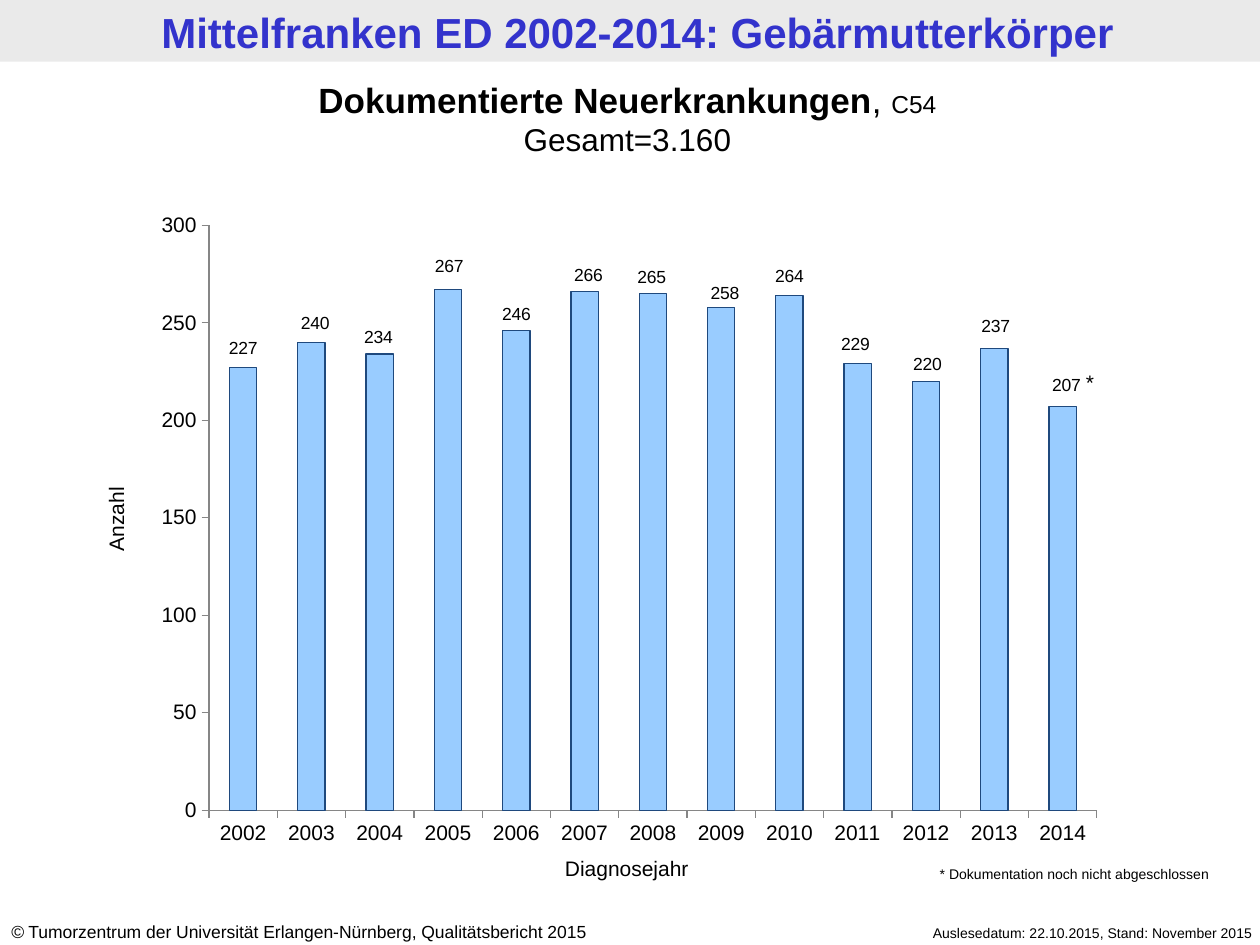
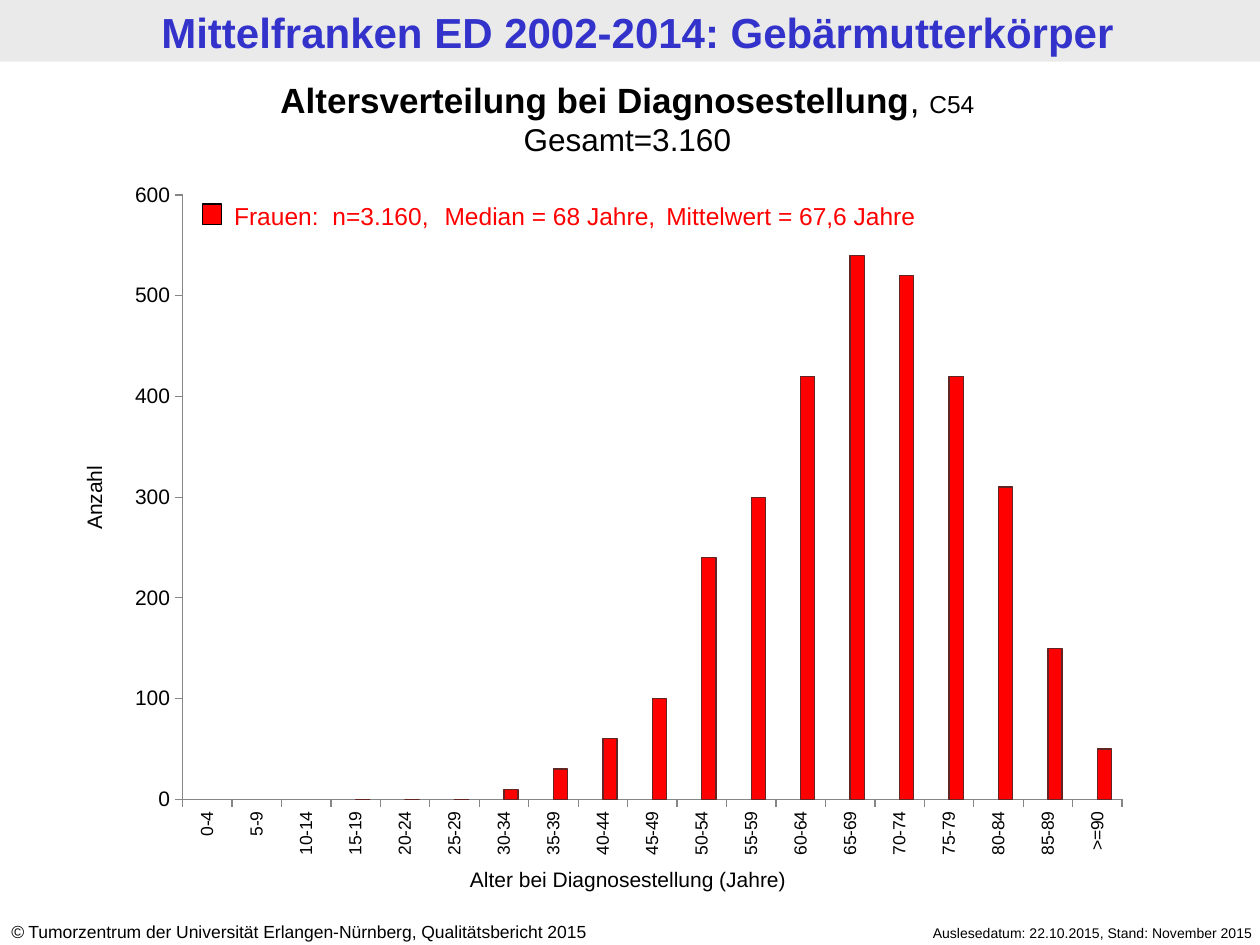
"""Build two slides on uterine cancer in Mittelfranken: new cases by year and by age."""
import pptx
import pptx.chart.data
import pptx.dml.color
import pptx.enum.chart
import pptx.enum.shapes
import pptx.enum.text
import pptx.oxml
import pptx.oxml.ns
import pptx.util

Inches = pptx.util.Inches
Pt = pptx.util.Pt
ALIGN = pptx.enum.text.PP_ALIGN
CHART = pptx.enum.chart

COLOURS = {
    "band": "EAEAEA", "title": "3333CC", "text": "000000", "axis": "868686",
    "year_bar": "99CCFF", "year_line": "1F497D",
    "empty_bar": "3366FF", "empty_line": "0033CC",
    "women": "FF0000", "women_line": "632523", "paper": "FFFFFF",
}
FONT = "Arial"
TITLE = "Mittelfranken ED 2002-2014: Gebärmutterkörper"
TOTAL = "Gesamt=3.160"
COPYRIGHT = " Tumorzentrum der Universität Erlangen-Nürnberg, Qualitätsbericht 2015"
STATUS = "Auslesedatum: 22.10.2015, Stand: November 2015"
LEGEND = "Frauen: \tn=3.160, \tMedian = 68 Jahre,\tMittelwert = 67,6 Jahre"
LEGEND_TABS = [0.78, 0.88, 1.67, 3.43]

YEAR_CASES = [227, 240, 234, 267, 246, 266, 265, 258, 264, 229, 220, 237, 207]
YEAR_LABEL_SHIFTS = [
    (0, 0.15), (0.03, 0.15), (-0.01, 0.13), (0.01, 0.18), (0, 0.13),
    (0.03, 0.13), (-0.01, 0.13), (0.03, 0.11), (0, 0.15), (-0.02, 0.15),
    (0.01, 0.13), (0.01, 0.17), (0.03, 0.17),
]
AGE_CASES = [None, None, None, 0, 0, 0, 10, 30, 60, 100,
             240, 300, 420, 540, 520, 420, 310, 150, 50]

YEAR_CHART = {
    "kind": CHART.XL_CHART_TYPE.COLUMN_STACKED,
    "place": (1.15, 1.64, 7.71, 5.14),
    "plot": (0.066, 0.029, 0.914, 0.903),
    "categories": [str(2002 + step) for step in range(len(YEAR_CASES))],
    "series": [(YEAR_CASES, "year_bar", "year_line")],
    "maximum": 300, "unit": 50, "overlap": 100, "category_size": 12,
}
AGE_CHART = {
    "kind": CHART.XL_CHART_TYPE.COLUMN_CLUSTERED,
    "place": (0.91, 1.35, 8.16, 5.55),
    "plot": (0.066, 0.036, 0.914, 0.864),
    "categories": [f"{age}-{age + 4}" for age in range(0, 90, 5)] + [">=90"],
    "series": [([None] * len(AGE_CASES), "empty_bar", "empty_line"),
               (AGE_CASES, "women", "women_line")],
    "maximum": 600, "unit": 100, "overlap": 0, "category_size": 10,
}


def colour(name):
    return pptx.dml.color.RGBColor.from_string(COLOURS[name])


def apply(target, values):
    for name, value in values.items():
        setattr(target, name, value)


def style_font(font, size, name="text", **extra):
    apply(font, {"size": Pt(size), "name": FONT, **extra})
    font.color.rgb = colour(name)


def style_line(line, name):
    line.color.rgb = colour(name)
    line.width = Pt(0.75)


def add_text(page, place, lines, align=ALIGN.LEFT, inset=(0.1, 0.05), rotation=0, tabs=()):
    box = page.shapes.add_textbox(*map(Inches, place))
    box.rotation = rotation
    frame = box.text_frame
    side, end = map(Inches, inset)
    apply(frame, {"word_wrap": True, "margin_left": side, "margin_right": side,
                  "margin_top": end, "margin_bottom": end,
                  "auto_size": pptx.enum.text.MSO_AUTO_SIZE.SHAPE_TO_FIT_TEXT})
    for number, spans in enumerate(lines):
        para = frame.add_paragraph() if number else frame.paragraphs[0]
        para.alignment = align
        if tabs:
            tab_list = pptx.oxml.parse_xml(
                f"<a:tabLst {pptx.oxml.ns.nsdecls('a')}>"
                + "".join(f'<a:tab pos="{Inches(tab)}" algn="l"/>' for tab in tabs)
                + "</a:tabLst>")
            para._p.get_or_add_pPr().append(tab_list)
        for text, size, values in spans:
            span = para.add_run()
            span.text = text
            style_font(span.font, size, **values)


def add_rectangle(page, place, fill, line=None):
    shape = page.shapes.add_shape(pptx.enum.shapes.MSO_SHAPE.RECTANGLE, *map(Inches, place))
    shape.shadow.inherit = False
    shape.fill.solid()
    shape.fill.fore_color.rgb = colour(fill)
    if line:
        style_line(shape.line, line)
    else:
        shape.line.fill.background()


def add_page(deck, heading):
    page = deck.slides.add_slide(deck.slide_layouts[6])
    add_rectangle(page, (0, 0, 10, 0.49), "band")
    add_text(page, (0.06, 0.01, 10, 0.49), [[(TITLE, 24, {"name": "title", "bold": True})]],
             ALIGN.CENTER, inset=(0.09, 0.04))
    add_text(page, (6.65, 7.29, 3.39, 0.24), [[(STATUS, 8, {})]], ALIGN.RIGHT)
    add_text(page, (-0.01, 7.26, 5.24, 0.27),
             [[("©", 10, {"italic": True}), (COPYRIGHT, 10, {})]])
    add_text(page, (-0.04, 0.57, 10.04, 0.74),
             [[(heading, 20, {"bold": True}), (", ", 20, {}), ("C54", 14, {})],
              [(TOTAL, 18, {})]], ALIGN.CENTER)
    return page


def add_axis_titles(page, across, across_place, up_place):
    add_text(page, across_place, [[(across, 12, {})]], ALIGN.CENTER)
    add_text(page, up_place, [[("Anzahl", 12, {})]], ALIGN.CENTER, rotation=270)


def make_layout(target="", **sizes):
    inner = f'<c:layoutTarget val="{target}"/>' if target else ""
    if target:
        inner += '<c:xMode val="edge"/><c:yMode val="edge"/>'
    inner += "".join(f'<c:{key} val="{value:.4f}"/>' for key, value in sizes.items())
    return pptx.oxml.parse_xml(
        f"<c:layout {pptx.oxml.ns.nsdecls('c')}>"
        f"<c:manualLayout>{inner}</c:manualLayout></c:layout>")


def add_column_chart(page, design):
    data = pptx.chart.data.CategoryChartData()
    data.categories = design["categories"]
    for number, (values, _, _) in enumerate(design["series"], 1):
        data.add_series(f"Series {number}", values)
    chart = page.shapes.add_chart(design["kind"], *map(Inches, design["place"]), data).chart
    apply(chart, {"has_legend": False, "has_title": False})
    style_font(chart.font, 12)
    plot = chart.plots[0]
    apply(plot, {"gap_width": 150, "overlap": design["overlap"], "vary_by_categories": False})
    for series, (_, fill, line) in zip(plot.series, design["series"]):
        series.invert_if_negative = False
        series.format.fill.solid()
        series.format.fill.fore_color.rgb = colour(fill)
        style_line(series.format.line, line)
    apply(chart.value_axis, {"minimum_scale": 0, "maximum_scale": design["maximum"],
                             "major_unit": design["unit"]})
    for axis, size in ((chart.category_axis, design["category_size"]), (chart.value_axis, 12)):
        apply(axis, {"has_major_gridlines": False,
                     "major_tick_mark": CHART.XL_TICK_MARK.OUTSIDE,
                     "minor_tick_mark": CHART.XL_TICK_MARK.NONE})
        style_line(axis.format.line, "axis")
        style_font(axis.tick_labels.font, size)
    area = chart.element.xpath("//c:plotArea")[0]
    for old in area.xpath("./c:layout"):
        area.remove(old)
    area.insert(0, make_layout("inner", **dict(zip("xywh", design["plot"]))))
    return chart


def hide_leader_lines(chart):
    labels = chart.element.xpath("//c:ser/c:dLbls")[0]
    for old in labels.xpath("./c:showLeaderLines | ./c:extLst"):
        labels.remove(old)
    namespace = pptx.oxml.ns.nsdecls("c")
    labels.append(pptx.oxml.parse_xml(f'<c:showLeaderLines {namespace} val="0"/>'))
    labels.append(pptx.oxml.parse_xml(
        f'<c:extLst {namespace}><c:ext uri="{{CE6537A1-D6FC-4f65-9D91-7224C49458BB}}" '
        'xmlns:c15="http://schemas.microsoft.com/office/drawing/2012/chart">'
        '<c15:showLeaderLines val="0"/></c:ext></c:extLst>'))


def label_columns(chart, design, shifts):
    _, _, width, height = design["place"]
    series = chart.plots[0].series[0]
    style_font(series.data_labels.font, 10)
    series.data_labels.show_value = True
    for number in range(len(shifts)):
        label = series.points[number].data_label
        style_font(label.font, 10)
        label.position = CHART.XL_LABEL_POSITION.CENTER
    for element, value, (right, rise) in zip(chart.element.xpath("//c:dLbl"),
                                             series.values, shifts):
        half_column = value / design["maximum"] * design["plot"][3] / 2
        element.insert(1, make_layout(x=right / width, y=-half_column - rise / height))
    hide_leader_lines(chart)


def build_year_page(deck):
    page = add_page(deck, "Dokumentierte Neuerkrankungen")
    chart = add_column_chart(page, YEAR_CHART)
    label_columns(chart, YEAR_CHART, YEAR_LABEL_SHIFTS)
    add_axis_titles(page, "Diagnosejahr", (3.85, 6.74, 2.25, 0.3), (0.31, 3.97, 1.22, 0.3))
    add_text(page, (8.39, 2.88, 0.39, 0.3), [[("*", 12, {})]], ALIGN.RIGHT)
    add_text(page, (7.36, 6.82, 2.7, 0.24),
             [[("* Dokumentation noch nicht abgeschlossen", 8, {})]])


def build_age_page(deck):
    page = add_page(deck, "Altersverteilung bei Diagnosestellung")
    chart = add_column_chart(page, AGE_CHART)
    chart.element.xpath("//c:catAx/c:txPr/a:bodyPr")[0].set("rot", "-5400000")
    area = chart.element.xpath("//c:plotArea")[0]
    area.append(pptx.oxml.parse_xml(
        f"<c:spPr {pptx.oxml.ns.nsdecls('c', 'a')}><a:solidFill>"
        f'<a:srgbClr val="{COLOURS["paper"]}"/></a:solidFill></c:spPr>'))
    add_text(page, (1.76, 1.55, 6.85, 0.34), [[(LEGEND, 14, {"name": "women"})]],
             tabs=LEGEND_TABS)
    add_rectangle(page, (1.61, 1.62, 0.15, 0.16), "women", "text")
    add_axis_titles(page, "Alter bei Diagnosestellung (Jahre)",
                    (3.45, 6.83, 3.07, 0.3), (-0.56, 3.8, 2.61, 0.3))


def main():
    deck = pptx.Presentation()
    apply(deck, {"slide_width": Inches(10), "slide_height": Inches(7.5)})
    build_year_page(deck)
    build_age_page(deck)
    deck.save("out.pptx")


if __name__ == "__main__":
    main()
